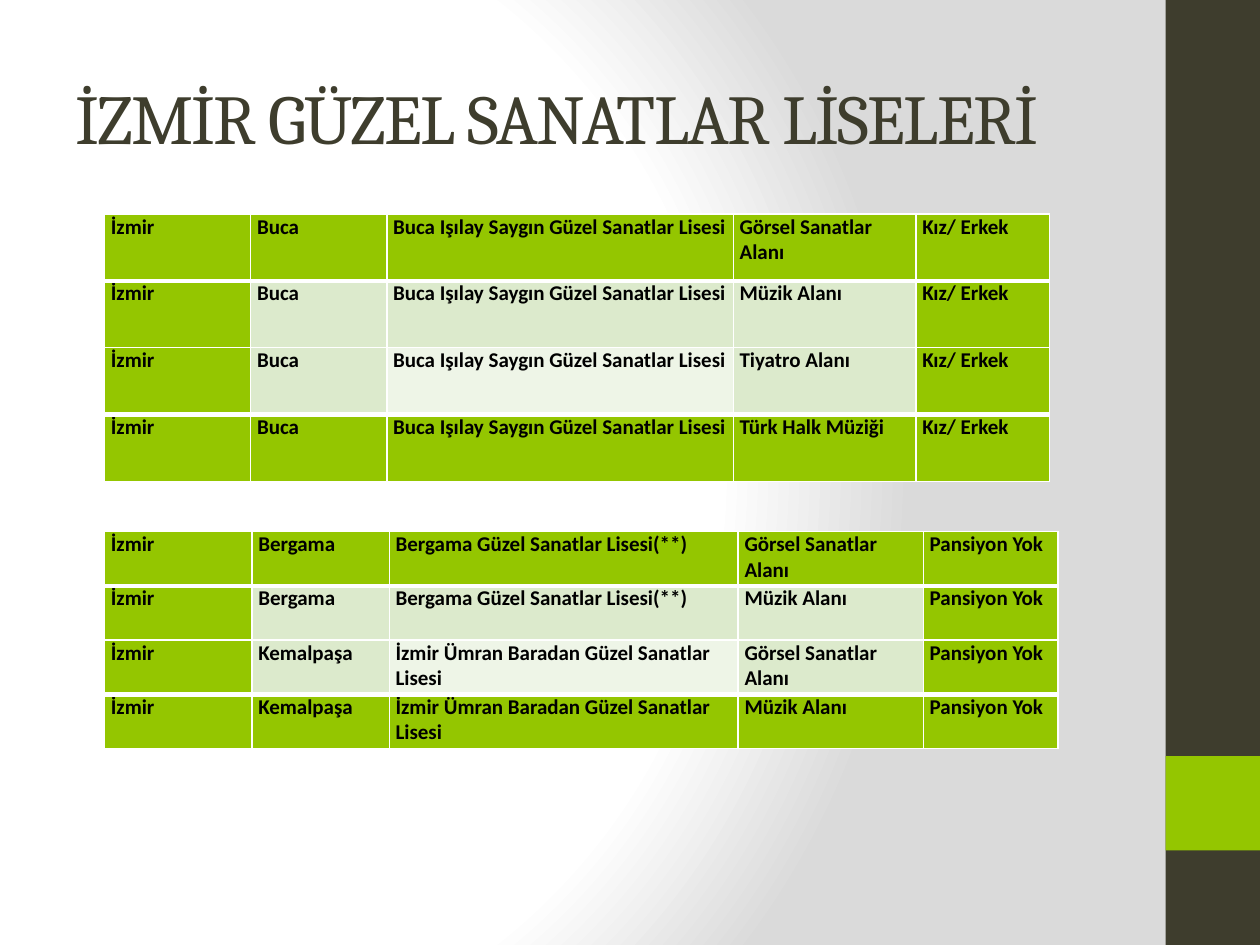
from lxml.etree import SubElement
from pptx import Presentation
from pptx.dml.color import RGBColor
from pptx.enum.shapes import MSO_SHAPE
from pptx.enum.text import MSO_ANCHOR
from pptx.oxml.ns import qn
from pptx.util import Inches, Pt

COLORS = {
    "white": "FFFFFF",
    "grey": "DADADA",
    "dark": "3E3D2D",
    "green": "94C600",
    "light": "DCEACC",
    "pale": "EEF5E7",
    "black": "000000",
}
TITLE_FONT = {"name": "Cambria", "size": Pt(40), "bold": False}
CELL_FONT = {"name": "Calibri", "size": Pt(12), "bold": True}
CELL_FORMAT = {
    "margin_left": 0,
    "margin_right": 0,
    "margin_top": 0,
    "margin_bottom": 0,
    "vertical_anchor": MSO_ANCHOR.TOP,
}
PLAIN_TABLE = {"first_row": False, "horz_banding": False}

BUCA = "Buca Işılay Saygın Güzel Sanatlar Lisesi"
BERGAMA = "Bergama Güzel Sanatlar Lisesi(**)"
KEMALPASA = "İzmir Ümran Baradan Güzel Sanatlar Lisesi"
VISUAL_ARTS = "Görsel Sanatlar Alanı"
MUSIC = "Müzik Alanı"
BUCA_PROGRAMS = [
    ("Buca", BUCA, field)
    for field in (VISUAL_ARTS, MUSIC, "Tiyatro Alanı", "Türk Halk Müziği")
]
DISTRICT_PROGRAMS = [
    (district, school, field)
    for district, school in (("Bergama", BERGAMA), ("Kemalpaşa", KEMALPASA))
    for field in (VISUAL_ARTS, MUSIC)
]


def apply(target, values):
    for key, value in values.items():
        setattr(target, key, value)


class SlideBuilder:
    """Holds the style and the current slide, and draws each kind of element."""

    def __init__(self, slide, colors):
        self.slide = slide
        self.colors = colors

    def rgb(self, color):
        return RGBColor.from_string(self.colors[color])

    def background(self, stops, center):
        self.slide.background.fill.gradient()
        gradient = self.slide.element.find(".//" + qn("a:gradFill"))
        gradient.clear()
        stop_list = SubElement(gradient, qn("a:gsLst"))
        for percent, color in stops:
            stop = SubElement(stop_list, qn("a:gs"), pos=str(percent * 1000))
            SubElement(stop, qn("a:srgbClr"), val=self.colors[color])
        circle = SubElement(gradient, qn("a:path"), path="circle")
        sides = {side: str(percent * 1000) for side, percent in center.items()}
        SubElement(circle, qn("a:fillToRect"), **sides)

    def block(self, left, top, width, height, color):
        block = self.slide.shapes.add_shape(
            MSO_SHAPE.RECTANGLE, Inches(left), Inches(top), Inches(width), Inches(height)
        )
        block.shadow.inherit = False
        block.fill.solid()
        block.fill.fore_color.rgb = self.rgb(color)
        block.line.fill.background()

    def styled_run(self, paragraph, text, font, color):
        run = paragraph.add_run()
        run.text = text
        apply(run.font, font)
        run.font.color.rgb = self.rgb(color)
        return run

    def title(self, left, top, width, height, text):
        frame = self.slide.shapes.add_textbox(
            Inches(left), Inches(top), Inches(width), Inches(height)
        ).text_frame
        apply(frame, {"word_wrap": True, "vertical_anchor": MSO_ANCHOR.MIDDLE})
        run = self.styled_run(frame.paragraphs[0], text, TITLE_FONT, "dark")
        run._r.get_or_add_rPr().set("spc", "-100")

    def cell(self, cell, text, color, top_border, bottom_border):
        apply(cell, CELL_FORMAT)
        paragraph = cell.text_frame.paragraphs[0]
        paragraph.space_before = Pt(4.2)
        properties = paragraph._p.get_or_add_pPr()
        properties.set("marL", str(Inches(0.05)))
        properties.set("indent", "0")
        self.styled_run(paragraph, text, CELL_FONT, "black")
        borders = {"L": 1, "R": 1, "T": top_border, "B": bottom_border}
        for side, width in borders.items():
            line = SubElement(cell._tc.get_or_add_tcPr(), qn("a:ln" + side), w=str(Pt(width)))
            fill = SubElement(line, qn("a:solidFill"))
            SubElement(fill, qn("a:srgbClr"), val=self.colors["white"])
        cell.fill.solid()
        cell.fill.fore_color.rgb = self.rgb(color)

    def table(self, left, top, widths, row_height, rows):
        last_row, last_column = len(rows) - 1, len(widths) - 1
        table = self.slide.shapes.add_table(
            len(rows), len(widths), Inches(left), Inches(top),
            Inches(sum(widths)), Inches(row_height * len(rows)),
        ).table
        apply(table, PLAIN_TABLE)
        for column, width in zip(table.columns, widths):
            column.width = Inches(width)
        for r, texts in enumerate(rows):
            table.rows[r].height = Inches(row_height)
            top_border = 3 if r in (1, last_row) else 1
            bottom_border = 3 if r in (0, last_row - 1) else 1
            for c, text in enumerate(texts):
                if r in (0, last_row) or c in (0, last_column):
                    color = "green"
                else:
                    color = "pale" if (r, c) == (2, 2) else "light"
                self.cell(table.cell(r, c), text, color, top_border, bottom_border)


def main():
    deck = Presentation()
    apply(deck, {"slide_width": Inches(10), "slide_height": Inches(7.5)})
    builder = SlideBuilder(deck.slides.add_slide(deck.slide_layouts[6]), COLORS)
    builder.background(
        [(0, "white"), (75, "white"), (100, "grey")],
        {"l": 20, "t": 50, "r": 100, "b": 50},
    )
    builder.block(9.25, 0, 0.75, 7.5, "dark")
    builder.block(9.25, 6, 0.75, 0.75, "green")
    builder.title(0.5, 0.3, 8.33, 1.25, "İZMİR GÜZEL SANATLAR LİSELERİ")
    for top, widths, row_height, programs, boarding in (
        (1.7, (1.16, 1.08, 2.75, 1.45, 1.06), 0.53, BUCA_PROGRAMS, "Kız/ Erkek"),
        (4.22, (1.17, 1.09, 2.77, 1.47, 1.07), 0.43, DISTRICT_PROGRAMS, "Pansiyon Yok"),
    ):
        rows = [("İzmir", *program, boarding) for program in programs]
        builder.table(0.83, top, widths, row_height, rows)
    deck.save("out.pptx")


if __name__ == "__main__":
    main()
